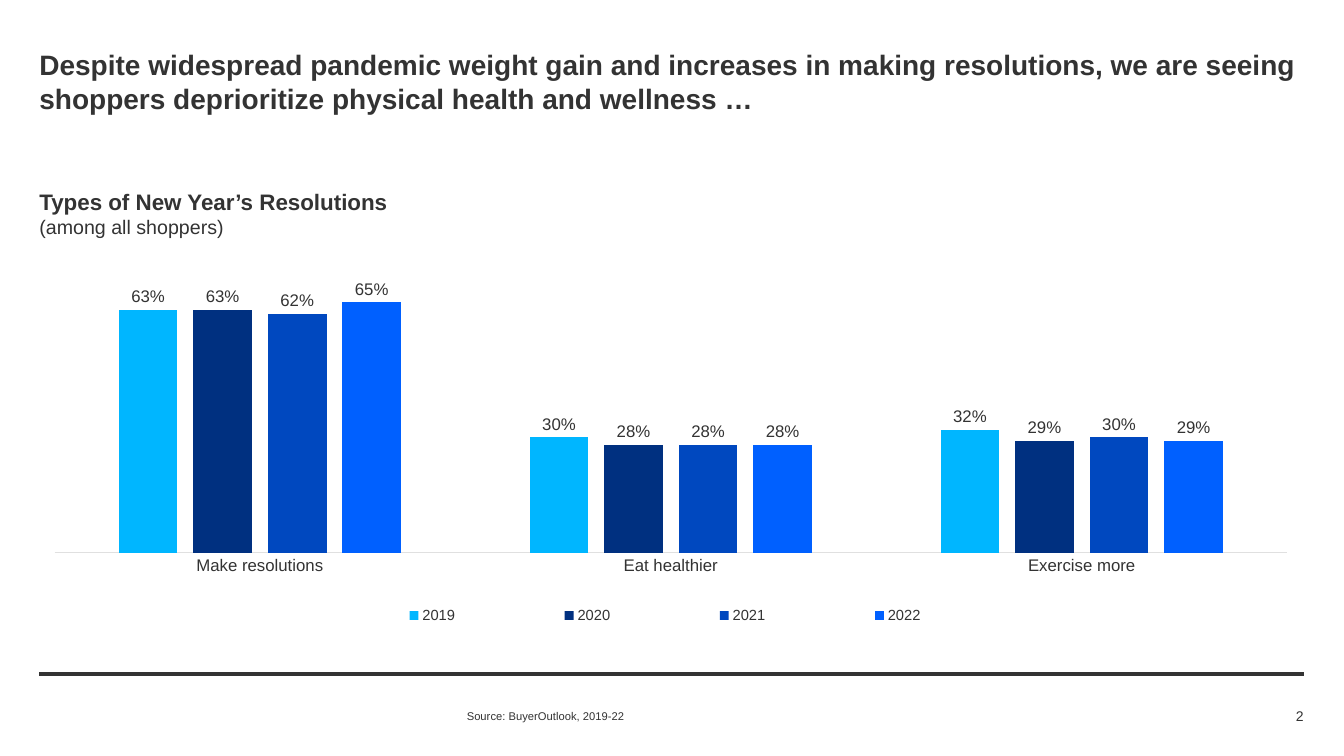
from pptx import Presentation
from pptx.chart.data import CategoryChartData
from pptx.dml.color import RGBColor
from pptx.enum.chart import XL_CHART_TYPE, XL_LABEL_POSITION, XL_LEGEND_POSITION, XL_TICK_MARK
from pptx.enum.shapes import MSO_CONNECTOR
from pptx.enum.text import MSO_ANCHOR, MSO_AUTO_SIZE, PP_ALIGN
from pptx.oxml import parse_xml
from pptx.oxml.ns import nsdecls
from pptx.util import Inches, Pt
from lxml import etree

COLUMN = XL_CHART_TYPE.COLUMN_CLUSTERED
LABEL_OUTSIDE = XL_LABEL_POSITION.OUTSIDE_END
LEGEND_BOTTOM = XL_LEGEND_POSITION.BOTTOM
NO_TICK = XL_TICK_MARK.NONE
STRAIGHT = MSO_CONNECTOR.STRAIGHT
TOP, MIDDLE = MSO_ANCHOR.TOP, MSO_ANCHOR.MIDDLE
NO_FIT = MSO_AUTO_SIZE.NONE
LEFT, RIGHT = PP_ALIGN.LEFT, PP_ALIGN.RIGHT

FONT = "Arial"
COLORS = {"text": "333333", "axis": "E0E0E0", "2019": "00B6FF",
          "2020": "003080", "2021": "0048BF", "2022": "0060FF"}
CATEGORIES = ["Make resolutions", "Eat healthier", "Exercise more"]
SHARES = {"2019": (0.63, 0.30, 0.32), "2020": (0.63, 0.28, 0.29),
          "2021": (0.62, 0.28, 0.30), "2022": (0.65, 0.28, 0.29)}
MARGIN, WIDTH = 0.39, 12.54


def color(name):
    """Return the named colour."""
    return RGBColor.from_string(COLORS[name])


def set_font(font, size, bold=False):
    """Apply the slide's typeface and text colour."""
    font.name, font.size, font.bold = FONT, Pt(size), bold
    font.color.rgb = color("text")


def fill_text(s, lines, anchor=TOP, align=LEFT, wrap=True):
    """Write (text, size, bold) lines into a shape without insets."""
    tf = s.text_frame
    tf.margin_left = tf.margin_right = tf.margin_top = tf.margin_bottom = 0
    tf.auto_size, tf.word_wrap, tf.vertical_anchor = NO_FIT, wrap, anchor
    for i, (text, size, bold) in enumerate(lines):
        p = tf.add_paragraph() if i else tf.paragraphs[0]
        p.text, p.alignment = text, align
        set_font(p.font, size, bold)


def add_text(slide, box, lines, **options):
    """Add a text box at the given left, top, width and height."""
    s = slide.shapes.add_textbox(*map(Inches, box))
    fill_text(s, lines, **options)


def add_title(slide, box):
    """Place and fill the title placeholder."""
    s = slide.shapes.title
    s.left, s.top, s.width, s.height = map(Inches, box)
    fill_text(s, [("Despite widespread pandemic weight gain and increases in making "
                   "resolutions, we are seeing shoppers deprioritize physical health "
                   "and wellness …", 20, True)])


def set_layout(parent, index, box, inner=False):
    """Fix the place of a chart part as fractions of the chart."""
    for old in parent.xpath("c:layout"):
        parent.remove(old)
    target = '<c:layoutTarget val="inner"/>' if inner else ""
    modes = "".join(f'<c:{k}Mode val="edge"/>' for k in "xy")
    sizes = "".join(f'<c:{k} val="{v}"/>' for k, v in zip("xywh", box))
    parent.insert(index, parse_xml(
        f'<c:layout {nsdecls("c")}><c:manualLayout>{target}{modes}{sizes}'
        '</c:manualLayout></c:layout>'))


def add_resolutions_chart(slide, box):
    """Add the clustered columns of resolutions by year."""
    data = CategoryChartData(number_format="0%")
    data.categories = CATEGORIES
    for year, values in SHARES.items():
        data.add_series(year, values)
    chart = slide.shapes.add_chart(COLUMN, *map(Inches, box), data).chart
    set_font(chart.font, 10)
    chart.has_title = False

    plot = chart.plots[0]
    plot.gap_width, plot.overlap, plot.vary_by_categories = 219, -27, False
    for ser in plot.series:
        ser.format.fill.solid()
        ser.format.fill.fore_color.rgb = color(ser.name)
        labels = ser.data_labels
        labels.show_value, labels.position = True, LABEL_OUTSIDE
        labels.number_format, labels.number_format_is_linked = "0%", False
        set_font(labels.font, 12)

    axis = chart.category_axis
    axis.major_tick_mark = axis.minor_tick_mark = NO_TICK
    axis.format.line.color.rgb = color("axis")
    axis.format.line.width = Pt(0.75)
    set_font(axis.tick_labels.font, 12)
    axis = chart.value_axis
    axis.minimum_scale, axis.maximum_scale = 0, 0.7
    axis.has_major_gridlines = axis.visible = False

    chart.has_legend = True
    legend = chart.legend
    legend.position, legend.include_in_layout = LEGEND_BOTTOM, False
    set_font(legend.font, 10.5)
    root = plot._element.getparent()
    set_layout(root, 0, (0.012, 0.044, 0.975, 0.744), inner=True)
    set_layout(legend._element, 1, (0.21, 0.92, 0.57, 0.08))


def add_footer(slide, left, top, width):
    """Add the rule, source line and page number."""
    s = slide.shapes.add_connector(
        STRAIGHT, *map(Inches, (left, top, left + width, top)))
    s.line.color.rgb, s.line.width = color("text"), Pt(3)
    etree.SubElement(
        s._element.spPr, "{http://schemas.openxmlformats.org/drawingml/2006/main}effectLst")
    add_text(slide, (left + 4.24, top + 0.3, 8.2, 0.22),
             [("Source: BuyerOutlook, 2019-22", 8, False)], anchor=MIDDLE)
    add_text(slide, (left + width - 1.06, top + 0.3, 1.06, 0.22),
             [("2", 10, False)], anchor=MIDDLE, align=RIGHT)


def main():
    """Build and save the slide."""
    prs = Presentation()
    prs.slide_width, prs.slide_height = Inches(13.33), Inches(7.5)
    slide = prs.slides.add_slide(prs.slide_layouts[5])
    add_title(slide, (MARGIN, 0.47, WIDTH, 0.44))
    add_text(slide, (MARGIN, 1.87, 3.5, 0.5),
             [("Types of New Year’s Resolutions", 16, True),
              ("(among all shoppers)", 14, False)], wrap=False)
    add_resolutions_chart(slide, (MARGIN, 2.65, WIDTH, 3.6))
    add_footer(slide, MARGIN, 6.69, WIDTH)
    prs.save("out.pptx")


if __name__ == "__main__":
    main()
